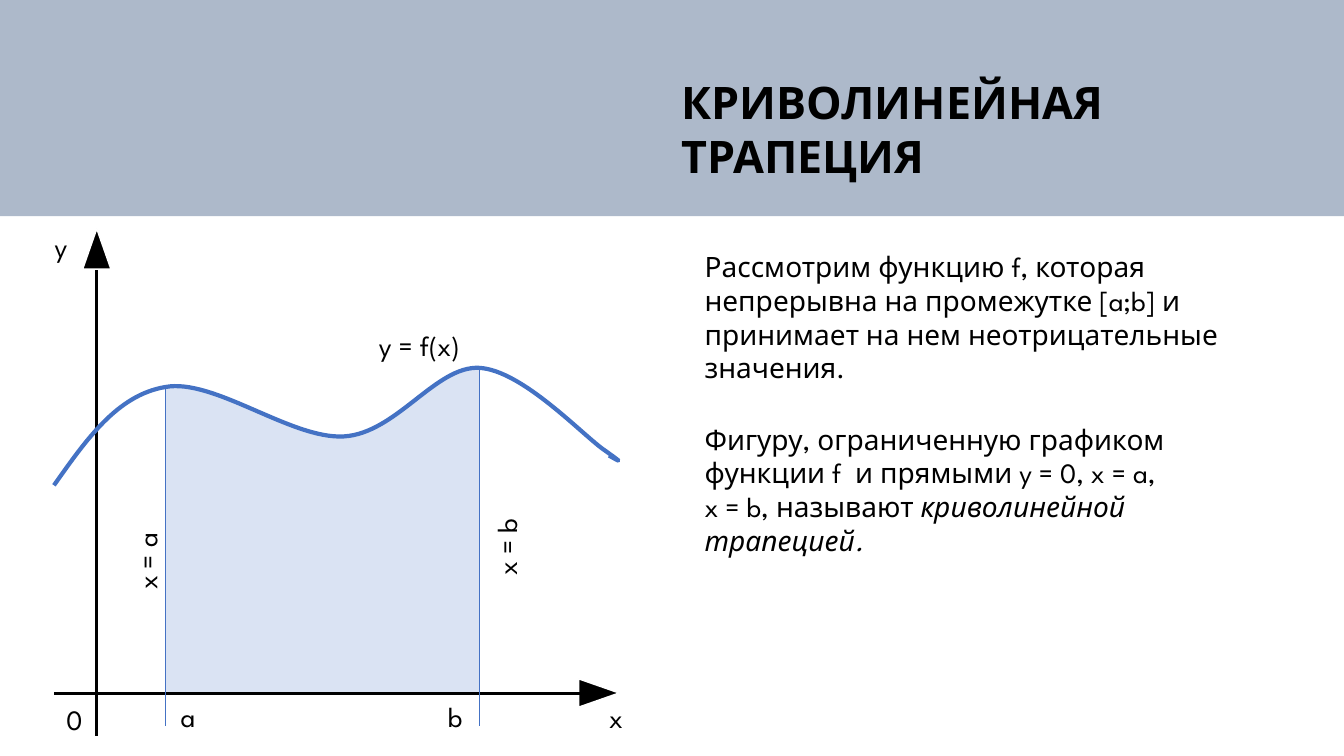
from pptx import Presentation
from pptx.dml.color import RGBColor
from pptx.enum.shapes import MSO_CONNECTOR, MSO_SHAPE
from pptx.enum.text import MSO_AUTO_SIZE, PP_ALIGN
from pptx.oxml.ns import qn
from pptx.util import Inches, Pt
from lxml.etree import SubElement

BLACK = RGBColor(0x00, 0x00, 0x00)
WHITE = RGBColor(0xFF, 0xFF, 0xFF)
BAND = RGBColor(0xAD, 0xB9, 0xCA)
AREA = RGBColor(0xDA, 0xE3, 0xF3)
CURVE = RGBColor(0x44, 0x72, 0xC4)

CELL = Inches(0.1)
LEFT_BOUND, RIGHT_BOUND, AXIS_ROW = 16.4, 47.5, 68.8
LABEL_FORMAT = {"alignment": PP_ALIGN.CENTER, "line_spacing": 1.07, "space_after": Pt(8)}

START = (5.35, 48.15)
LEFT_TOP, RIGHT_TOP = (LEFT_BOUND, 38.4), (RIGHT_BOUND, 36.5)
RISE = [(8.5, 43.7), (11.6, 39.2), LEFT_TOP]
DIP = [(21.2, 37.5), (28.9, 43.6), (34.1, 43.3)]
CREST = [(39.3, 43), (43.2, 36.3), RIGHT_TOP]
FALL = [(51.8, 36.7), (57.9, 43.3), (60, 44.7)]
TAIL = [(62.1, 46.2), (61.3, 45.7), (60.4, 45.2)]


class Page:
    """Draws styled elements on one slide, measured in columns and rows of a grid."""

    def __init__(self, deck, font_name="League Spartan"):
        self.slide = deck.slides.add_slide(deck.slide_layouts[6])
        self.font_name = font_name

    def cells(self, *counts):
        return [round(count * CELL) for count in counts]

    def paint(self, shape, fill=None, line=None, width=1):
        shape.shadow.inherit = False
        if fill is None:
            shape.fill.background()
        else:
            shape.fill.solid()
            shape.fill.fore_color.rgb = fill
        if line is None:
            shape.line.fill.background()
        else:
            shape.line.color.rgb = line
            shape.line.width = Pt(width)

    def preset(self, kind, frame, rotation=0, **style):
        shape = self.slide.shapes.add_shape(kind, *self.cells(*frame))
        shape.rotation = rotation
        self.paint(shape, **style)

    def curve(self, start, bends, corners=(), **style):
        controls = sum(bends, [])
        builder = self.slide.shapes.build_freeform(*self.cells(*start))
        builder.add_line_segments([self.cells(*point) for point in (*controls, *corners)],
                                  close=bool(corners))
        shape = builder.convert_to_shape()
        steps = list(shape._element.spPr.iter(qn("a:lnTo")))[:len(controls)]
        for first, second, third in zip(steps[::3], steps[1::3], steps[2::3]):
            first.tag_name = None
            bend = SubElement(first.getparent(), qn("a:cubicBezTo"))
            first.addprevious(bend)
            for step in (first, second, third):
                bend.append(step[0])
                step.getparent().remove(step)
        self.paint(shape, **style)

    def segment(self, start, end, color, width):
        line = self.slide.shapes.add_connector(MSO_CONNECTOR.STRAIGHT, *self.cells(*start, *end))
        line.line.color.rgb = color
        line.line.width = Pt(width)
        SubElement(line._element.spPr, qn("a:effectLst"))

    def text(self, frame, paragraphs, size=20, rotation=0, layout=None, **emphasis):
        box = self.slide.shapes.add_textbox(*self.cells(*frame))
        box.rotation = rotation
        box.text_frame.word_wrap = True
        box.text_frame.auto_size = MSO_AUTO_SIZE.SHAPE_TO_FIT_TEXT
        for index, spans in enumerate(paragraphs):
            para = box.text_frame.add_paragraph() if index else box.text_frame.paragraphs[0]
            for name, value in (layout or {}).items():
                setattr(para, name, value)
            for content, italic in spans:
                for number, words in enumerate(content.split("\n")):
                    if number:
                        para.add_line_break()
                    span = para.add_run()
                    span.text = words
                    look = {"name": self.font_name, "size": Pt(size), "italic": italic, **emphasis}
                    for name, value in look.items():
                        setattr(span.font, name, value)
                    span.font.color.rgb = BLACK

    def label(self, frame, words, rotation=0):
        self.text(frame, [[(words, None)]], rotation=rotation, layout=LABEL_FORMAT)


def main():
    deck = Presentation()
    deck.slide_width, deck.slide_height = Inches(13.33), Inches(7.5)
    page = Page(deck)

    page.preset(MSO_SHAPE.RECTANGLE, (0, -1.1, 133.3, 22.55), fill=BAND)
    page.text((66.6, 6.95, 65.1, 11.8), [[("КРИВОЛИНЕЙНАЯ", None)], [("ТРАПЕЦИЯ", None)]],
              size=32, bold=True)
    page.text((68.9, 24.3, 62.8, 14.5), [[(
        "Рассмотрим функцию f, которая непрерывна на промежутке [a;b] "
        "и принимает на нем неотрицательные значения.", None)]])

    arrowhead = {"fill": BLACK, "line": WHITE}
    page.segment((9.6, 24.7), (9.6, 73), BLACK, 2.25)
    page.preset(MSO_SHAPE.ISOSCELES_TRIANGLE, (8.2, 22.7, 2.8, 4), **arrowhead)
    page.curve(LEFT_TOP, [DIP, CREST], [(RIGHT_BOUND, AXIS_ROW), (LEFT_BOUND, AXIS_ROW)],
               fill=AREA)
    page.preset(MSO_SHAPE.ISOSCELES_TRIANGLE, (58, 66.75, 2.8, 4), rotation=90, **arrowhead)
    page.segment((57.5, AXIS_ROW), (5.35, AXIS_ROW), BLACK, 2.25)
    page.curve(START, [RISE, DIP, CREST, FALL, TAIL], line=CURVE, width=3)
    for top in (LEFT_TOP, RIGHT_TOP):
        page.segment(top, (top[0], 72.05), CURVE, 0.5)

    for frame, words, rotation in (
        ((8.3, 53.7, 11.6, 4), "x = a", 270),
        ((43.5, 52.3, 12.6, 4), "x = b", 270),
        ((15.4, 68.7, 6.5, 4), "a", 0),
        ((42.1, 68.65, 6.1, 4), "b", 0),
        ((55.55, 68.8, 11.1, 4.4), "x", 0),
        ((1.1, 22.05, 9.9, 4), "y", 0),
        ((34.1, 31.9, 15.7, 4), "y = f(x) ", 0),
        ((3.65, 68.95, 7.5, 4), "0", 0),
    ):
        page.label(frame, words, rotation)

    page.text((68.9, 41.4, 56, 14.5), [[
        ("Фигуру, ограниченную графиком функции f  и прямыми y = 0, x = a, \n"
         "x = b, называют ", None),
        ("криволинейной трапецией.", True)]])

    deck.save("out.pptx")


if __name__ == "__main__":
    main()
